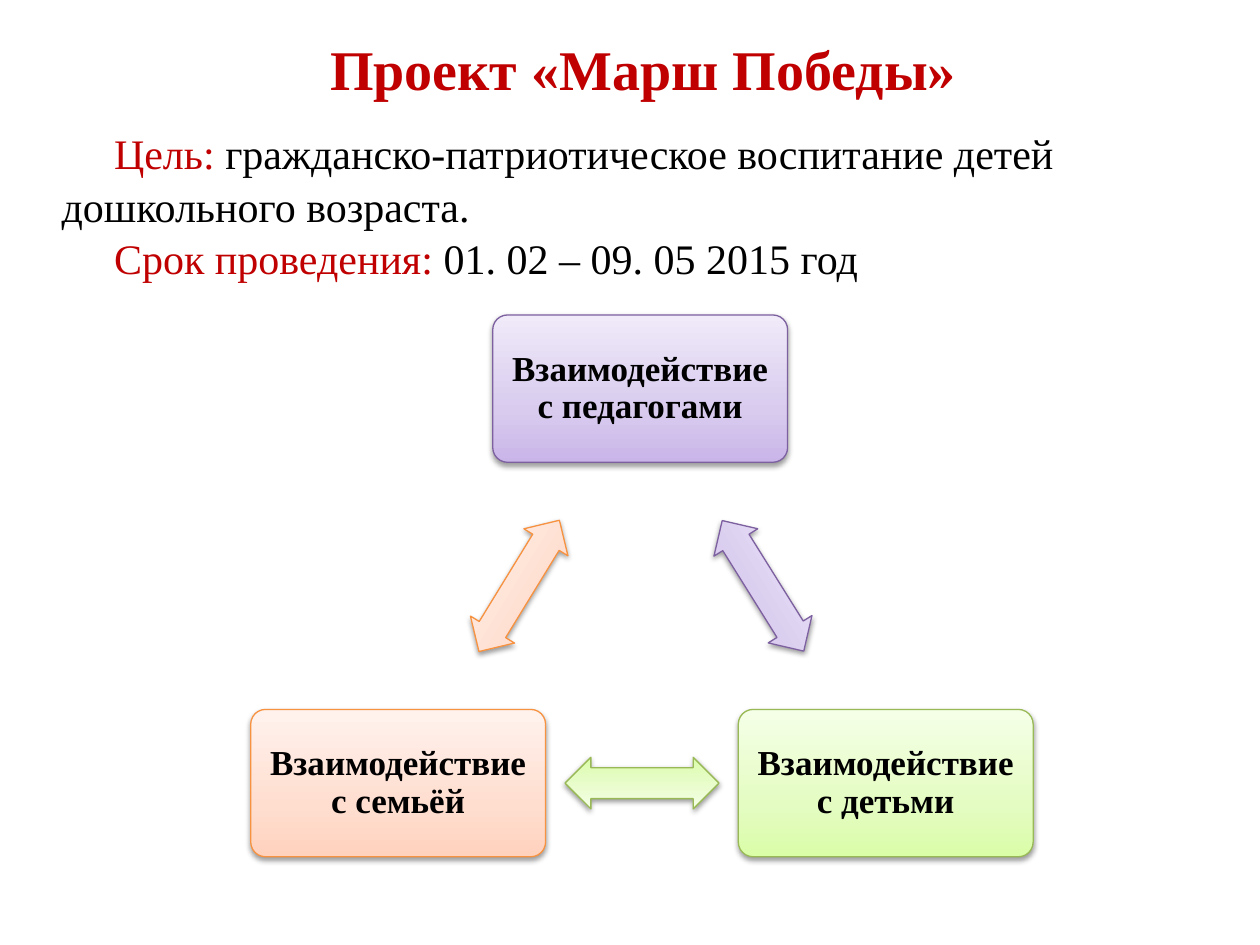
from copy import deepcopy
from dataclasses import dataclass

from lxml import etree
from pptx import Presentation
from pptx.dml.color import RGBColor
from pptx.enum import shapes, text
from pptx.oxml import ns
from pptx.util import Pt


@dataclass(frozen=True)
class Theme:
    """Colours and type sizes of the slide."""
    font: str = "Times New Roman"
    accent: str = "C00000"
    ink: str = "000000"
    title: int = 32
    body: int = 24
    label: int = 20
    violet: tuple = ("7D60A0", "C9B5E8", "D8CBEE", "F0EAF9")
    green: tuple = ("98B955", "DAFDA7", "E4FCC2", "F5FFE7")
    orange: tuple = ("F69240", "FFD2BD", "FFDED0", "FFF2ED")


THEME = Theme()


def write(paragraph, runs, size, bold=False, align=None, spacing=None, indent=0):
    """Fill a paragraph with (wording, colour) runs in one format."""
    if indent:
        properties = paragraph._p.get_or_add_pPr()
        properties.set("marL", "0")
        properties.set("indent", str(Pt(indent)))
    paragraph.alignment = align
    paragraph.line_spacing = spacing
    for wording, colour in runs:
        run = paragraph.add_run()
        run.text = wording
        run.font.name = THEME.font
        run.font.size = Pt(size)
        run.font.bold = bold
        run.font.color.rgb = RGBColor.from_string(colour)


def add_shadow(shape):
    """Give the shape a soft shadow straight below it."""
    shape.shadow.inherit = False
    effects = shape._element.spPr.find(ns.qn("a:effectLst"))
    shadow = etree.SubElement(effects, ns.qn("a:outerShdw"), blurRad=str(Pt(3.1)),
                              dist=str(Pt(1.6)), dir="5400000", rotWithShape="0")
    black = etree.SubElement(shadow, ns.qn("a:srgbClr"), val=THEME.ink)
    etree.SubElement(black, ns.qn("a:alpha"), val="38000")


def add_tinted(slide, kind, centre, size, palette):
    """Add a shape around its centre with the palette's outline and gradient."""
    (x, y), (width, height) = centre, size
    shape = slide.shapes.add_shape(kind, Pt(x - width / 2), Pt(y - height / 2),
                                   Pt(width), Pt(height))
    outline, *tints = palette
    shape.line.color.rgb = RGBColor.from_string(outline)
    shape.line.width = Pt(0.75)
    shape.fill.gradient()
    shape.fill.gradient_angle = 90
    stop_list = shape._element.spPr.find(".//" + ns.qn("a:gsLst"))
    stop_list.insert(1, deepcopy(stop_list[0]))
    for stop, position, tint in zip(shape.fill.gradient_stops, (0, 0.35, 1), tints):
        stop.position = position
        stop.color.rgb = RGBColor.from_string(tint)
    add_shadow(shape)
    return shape


def place_title(slide, left, top, width, height):
    """Move the title placeholder into its box and write the heading."""
    title = slide.shapes.title
    title.left, title.top, title.width, title.height = map(Pt, (left, top, width, height))
    title.text_frame.vertical_anchor = text.MSO_ANCHOR.MIDDLE
    write(title.text_frame.paragraphs[0], [("Проект «Марш Победы»", THEME.accent)],
          THEME.title, bold=True, align=text.PP_ALIGN.CENTER)


def place_summary(slide, left, top, width, height):
    """Write the goal and the dates of the project."""
    frame = slide.shapes.add_textbox(*map(Pt, (left, top, width, height))).text_frame
    frame.word_wrap = True
    facts = (("Цель:", " гражданско-патриотическое воспитание детей дошкольного возраста."),
             ("Срок проведения: ", "01. 02 – 09. 05 2015 год"))
    for index, (heading, detail) in enumerate(facts):
        paragraph = frame.add_paragraph() if index else frame.paragraphs[0]
        write(paragraph, [(heading, THEME.accent), (detail, THEME.ink)],
              THEME.body, spacing=1.05, indent=30)


def place_cycle(slide, left, top, width, height):
    """Draw three partners at the corners of a triangle, joined by arrows."""
    card = card_width, card_height = 168.5, 84.2
    upper, lower = top + card_height / 2, top + height - card_height / 2
    partners = (
        ("Взаимодействие с педагогами", (left + width / 2 - 1, upper), THEME.violet, 58),
        ("Взаимодействие с детьми", (left + width - card_width / 2, lower), THEME.green, 180),
        ("Взаимодействие с семьёй", (left + card_width / 2, lower), THEME.orange, 301.5),
    )
    for index, (label, centre, palette, angle) in enumerate(partners):
        partner = add_tinted(slide, shapes.MSO_SHAPE.ROUNDED_RECTANGLE, centre, card, palette)
        partner.adjustments[0] = 0.1
        frame = partner.text_frame
        frame.word_wrap = True
        frame.vertical_anchor = text.MSO_ANCHOR.MIDDLE
        frame.margin_left = frame.margin_right = Pt(5)
        frame.margin_top = frame.margin_bottom = Pt(5)
        write(frame.paragraphs[0], [(label, THEME.ink)], THEME.label, bold=True,
              align=text.PP_ALIGN.CENTER, spacing=0.9)

        following = partners[(index + 1) % len(partners)][1]
        midpoint = [(a + b) / 2 for a, b in zip(centre, following)]
        arrow = add_tinted(slide, shapes.MSO_SHAPE.LEFT_RIGHT_ARROW, midpoint,
                           (88, 29.5), palette)
        arrow.adjustments[0], arrow.adjustments[1] = 0.6, 0.5
        arrow.rotation = angle


def main():
    """Build and save the slide."""
    deck = Presentation()
    deck.slide_width, deck.slide_height = Pt(720), Pt(540)
    slide = deck.slides.add_slide(deck.slide_layouts[5])
    place_title(slide, 157.7, 0, 419.8, 77.8)
    place_cycle(slide, 143.3, 180, 447.1, 309.6)
    place_summary(slide, 28.1, 67.7, 680.4, 94.3)
    deck.save("out.pptx")


if __name__ == "__main__":
    main()
